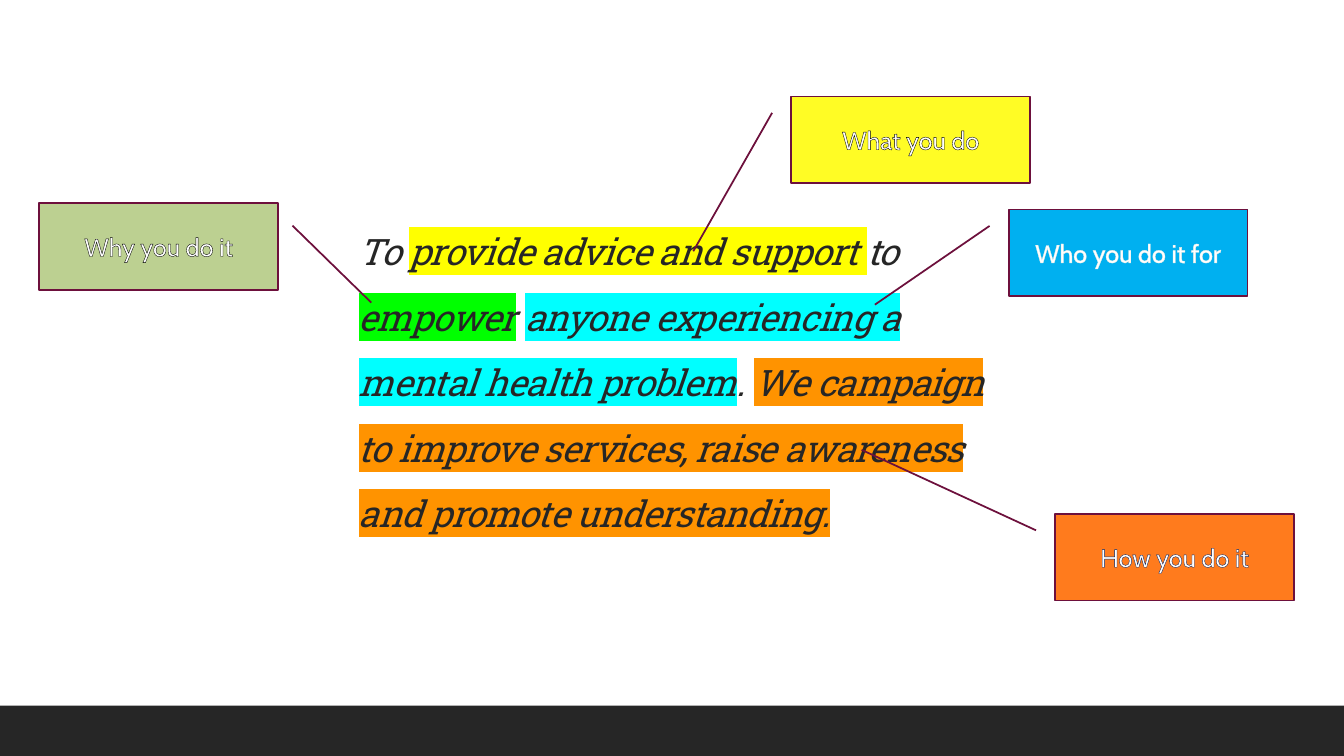
from lxml import etree
from pptx import Presentation
from pptx.dml import color
from pptx.enum import shapes, text
from pptx.oxml import ns
from pptx.util import Cm, Pt

WIDTH, HEIGHT = 33.87, 19.05
FOOTER_HEIGHT = 1.27
CALLOUT_WIDTH, CALLOUT_HEIGHT = 6.02, 2.18

MISSION = [
    ("To ", None),
    ("provide advice and support ", "FFFF00"),
    ("to ", None),
    ("empower", "00FF00"),
    (" ", None),
    ("anyone experiencing a mental health problem", "00FFFF"),
    (". ", None),
    ("We campaign to improve services, raise awareness and promote understanding.", "FF9300"),
]

# label, left, top, fill, text outline, pointer (y1, x1, y2, x2 as shares of the box)
CALLOUTS = [
    ("What you do", 19.94, 2.43, "FFFC25", "000000", (0.19, -0.08, 1.79, -0.41)),
    ("Why you do it", 0.99, 5.12, "BCD091", "000000", (0.26, 1.06, 1.15, 1.39)),
    ("Who you do it for", 25.42, 5.28, "00B0F0", "E2E8E3", (0.19, -0.08, 1.1, -0.56)),
    ("How you do it", 26.59, 12.95, "FF7B1D", "002060", (0.19, -0.08, -0.74, -0.81)),
]


def rgb(hex_code):
    return color.RGBColor.from_string(hex_code)


def color_element(tag, hex_code):
    """Return a drawing element that holds one RGB colour."""
    element = etree.Element(ns.qn(tag))
    etree.SubElement(element, ns.qn("a:srgbClr"), val=hex_code)
    return element


def add_text(paragraph, words, font, size, hex_code, italic=None,
             spacing=None, highlight=None, outline=None):
    """Add a run; spacing is in points, highlight and outline are colours."""
    run = paragraph.add_run()
    run.text = words
    properties = run._r.get_or_add_rPr()
    if spacing is not None:
        properties.set("spc", str(int(spacing * 100)))
    if outline:
        line = etree.Element(ns.qn("a:ln"), w=str(Pt(0.75)))
        line.append(color_element("a:solidFill", outline))
        properties.insert(0, line)
    if highlight:
        properties.append(color_element("a:highlight", highlight))
    run.font.color.rgb = rgb(hex_code)
    run.font.name = font
    run.font.size = Pt(size)
    run.font.italic = italic


def add_filled_shape(slide, kind, left, top, width, height, fill):
    shape = slide.shapes.add_shape(kind, Cm(left), Cm(top), Cm(width), Cm(height))
    shape.shadow.inherit = False
    shape.fill.solid()
    shape.fill.fore_color.rgb = rgb(fill)
    shape.line.fill.background()
    return shape


def add_band(slide, top, height, fill):
    add_filled_shape(slide, shapes.MSO_SHAPE.RECTANGLE, 0, top, WIDTH, height, fill)


def add_callout(slide, label, left, top, fill, outline, pointer):
    shape = add_filled_shape(slide, shapes.MSO_SHAPE.LINE_CALLOUT_1, left, top,
                             CALLOUT_WIDTH, CALLOUT_HEIGHT, fill)
    for index, share in enumerate(pointer):
        shape.adjustments[index] = share
    shape.line.color.rgb = rgb("6D103C")
    shape.line.width = Pt(1.25)
    shape.text_frame.vertical_anchor = text.MSO_ANCHOR.MIDDLE
    paragraph = shape.text_frame.paragraphs[0]
    paragraph.alignment = text.PP_ALIGN.CENTER
    add_text(paragraph, label, "Cabin", 18, "FFFFFF", outline=outline)


def fill_title(slide):
    title = slide.shapes.title
    title.left, title.top, title.width, title.height = Cm(8.79), Cm(4.5), Cm(16.54), Cm(9.7)
    frame = title.text_frame
    frame.word_wrap = True
    frame.auto_size = text.MSO_AUTO_SIZE.NONE
    frame.vertical_anchor = text.MSO_ANCHOR.MIDDLE
    paragraph = frame.paragraphs[0]
    paragraph.alignment = text.PP_ALIGN.LEFT
    paragraph.line_spacing = 1.5
    for words, highlight in MISSION:
        add_text(paragraph, words, "Roboto Slab", 26, "262626", italic=True,
                 spacing=-0.5, highlight=highlight)
    # Bring the title in front of the backdrop
    slide.shapes._spTree.append(title._element)


def main():
    presentation = Presentation()
    presentation.slide_width, presentation.slide_height = Cm(WIDTH), Cm(HEIGHT)
    slide = presentation.slides.add_slide(presentation.slide_layouts[5])
    add_band(slide, 0, HEIGHT, "FFFFFF")
    fill_title(slide)
    add_band(slide, HEIGHT - FOOTER_HEIGHT, FOOTER_HEIGHT, "262626")
    for callout in CALLOUTS:
        add_callout(slide, *callout)
    presentation.save("out.pptx")


if __name__ == "__main__":
    main()
